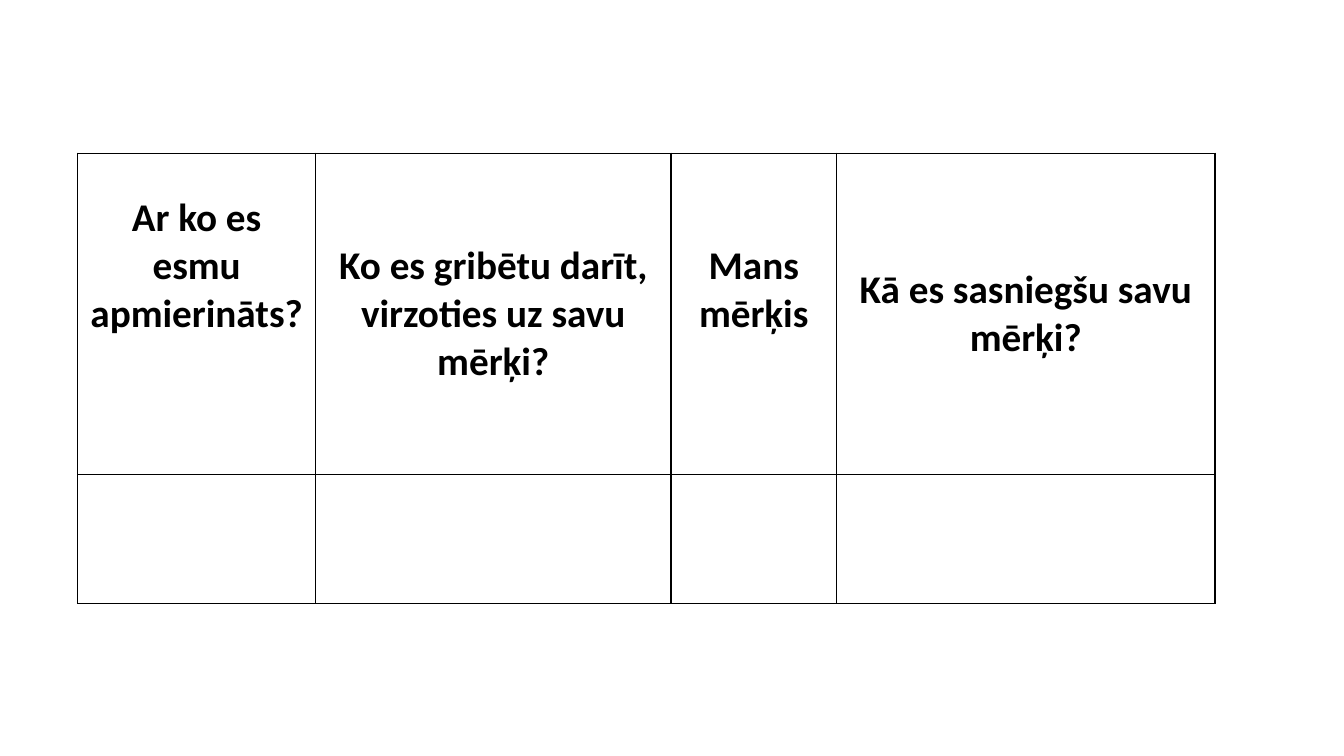
from dataclasses import dataclass

from lxml import etree
from pptx import Presentation
from pptx.dml.color import RGBColor
from pptx.enum import text
from pptx.oxml import ns
from pptx.table import _Cell
from pptx.util import Cm, Pt

BLACK = RGBColor(0, 0, 0)
WHITE = RGBColor(255, 255, 255)
LINE_HEIGHT = 1.21
CELL_MARGIN = 0.13


@dataclass
class Column:
    heading: str
    width: float
    lines_raised: int = 0


COLUMNS = [
    Column("Ar ko es esmu apmierināts?", 5.99, 2),
    Column("Ko es gribētu darīt, virzoties uz savu mērķi?", 8.96),
    Column("Mans mērķis", 4.17, 1),
    Column("Kā es sasniegšu savu mērķi?", 9.54),
]
ROW_HEIGHTS = [8.1, 3.25]


def add_borders(cell: _Cell) -> None:
    properties = cell._tc.get_or_add_tcPr()
    for position, side in enumerate(("lnL", "lnR", "lnT", "lnB")):
        line = etree.Element(ns.qn(f"a:{side}"), w=str(Pt(1)))
        fill = etree.SubElement(line, ns.qn("a:solidFill"))
        etree.SubElement(fill, ns.qn("a:srgbClr"), val=str(BLACK))
        properties.insert(position, line)


def write_heading(cell: _Cell, column: Column) -> None:
    cell.text = column.heading
    cell.vertical_anchor = text.MSO_ANCHOR.MIDDLE
    cell.margin_bottom = Cm(CELL_MARGIN + column.lines_raised * LINE_HEIGHT)
    paragraph = cell.text_frame.paragraphs[0]
    paragraph.alignment = text.PP_ALIGN.CENTER
    paragraph.font.name = "Calibri"
    paragraph.font.size = Pt(28)
    paragraph.font.bold = True
    paragraph.font.color.rgb = BLACK


def main() -> None:
    presentation = Presentation()
    presentation.slide_width = Cm(33.87)
    presentation.slide_height = Cm(19.05)
    slide = presentation.slides.add_slide(presentation.slide_layouts[6])

    width = sum(column.width for column in COLUMNS)
    table = slide.shapes.add_table(
        len(ROW_HEIGHTS), len(COLUMNS),
        Cm(1.96), Cm(3.86), Cm(width), Cm(sum(ROW_HEIGHTS)),
    ).table
    for row, height in zip(table.rows, ROW_HEIGHTS):
        row.height = Cm(height)
    for index, column in enumerate(COLUMNS):
        table.columns[index].width = Cm(column.width)
        write_heading(table.cell(0, index), column)
    for cell in table.iter_cells():
        cell.fill.solid()
        cell.fill.fore_color.rgb = WHITE
        add_borders(cell)

    presentation.save("out.pptx")


if __name__ == "__main__":
    main()
